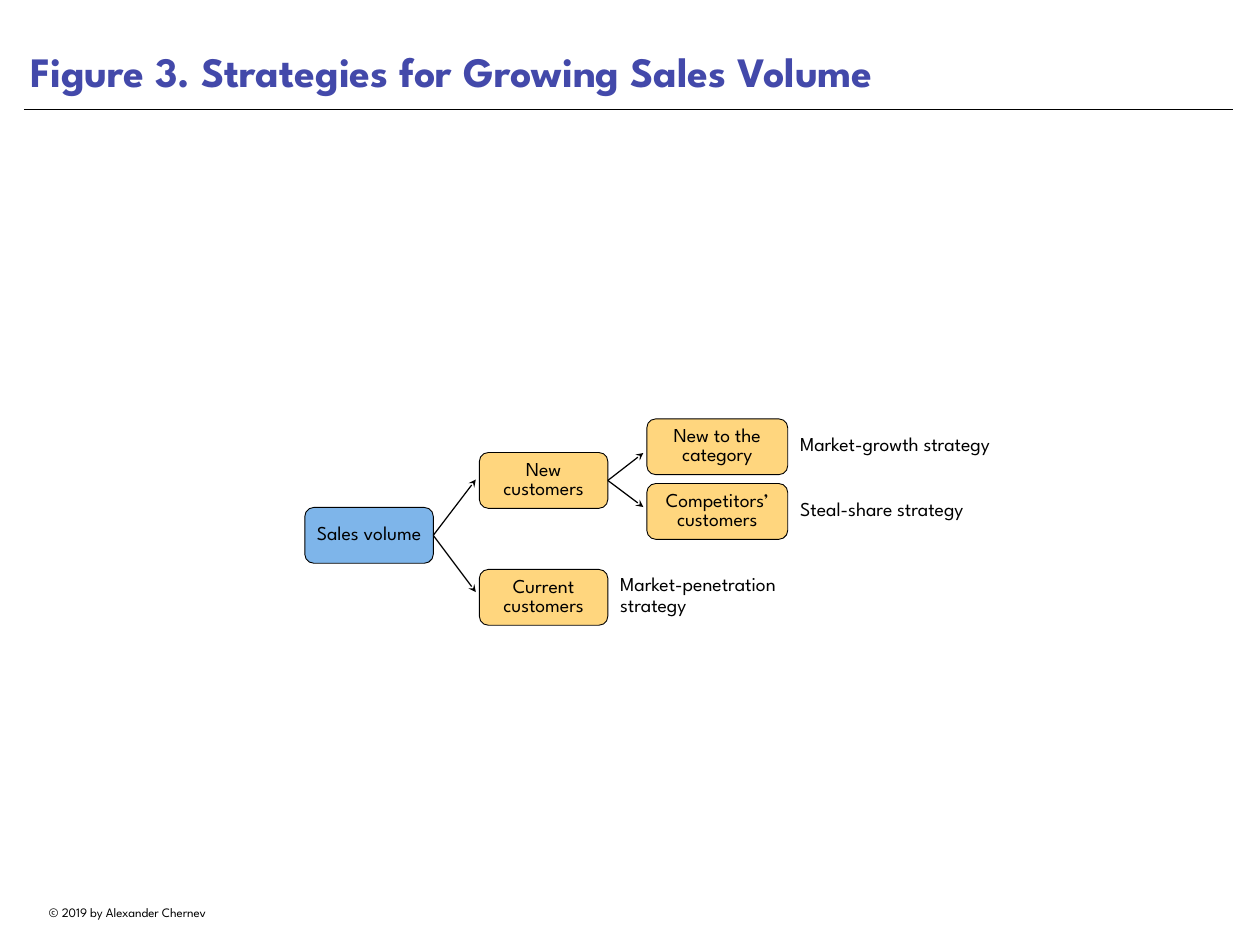
from lxml import etree
from pptx import Presentation
from pptx.dml.color import RGBColor
from pptx.enum.shapes import MSO_CONNECTOR, MSO_SHAPE
from pptx.enum.text import MSO_ANCHOR, MSO_AUTO_SIZE, PP_ALIGN
from pptx.oxml.ns import qn
from pptx.util import Inches, Pt

STRAIGHT = MSO_CONNECTOR.STRAIGHT
RECTANGLE, ROUNDED = MSO_SHAPE.RECTANGLE, MSO_SHAPE.ROUNDED_RECTANGLE
LEFT, CENTER = PP_ALIGN.LEFT, PP_ALIGN.CENTER
MIDDLE, BOTTOM = MSO_ANCHOR.MIDDLE, MSO_ANCHOR.BOTTOM
NO_FIT, FIT_SHAPE = MSO_AUTO_SIZE.NONE, MSO_AUTO_SIZE.SHAPE_TO_FIT_TEXT

FONT = "League Spartan"
BLACK, WHITE, INDIGO = "000000", "FFFFFF", "4349AA"
BLUE, YELLOW = "7EB5EA", "FFD67E"
RIGHT_SIDE = 3
BOX_HEIGHT = 0.63
LABEL_GAP, ARROW_GAP = 0.14, 0.04

# name: (text, left, top, width, fill), measured from the corner of the tree
BOXES = {
    "sales": ("Sales volume", 0, 1, 1.45, BLUE),
    "new": ("New customers", 1.97, 0.38, 1.45, YELLOW),
    "current": ("Current customers", 1.97, 1.7, 1.45, YELLOW),
    "category": ("New to the category", 3.86, 0, 1.59, YELLOW),
    "competitors": ("Competitors’ customers", 3.86, 0.73, 1.59, YELLOW),
}
# parent, child, offset of the arrow tip from the child's middle
BRANCHES = [
    ("sales", "new", -0.01),
    ("sales", "current", -0.06),
    ("new", "category", 0.07),
    ("new", "competitors", -0.05),
]
# box, strategy, label width
STRATEGIES = [
    ("current", "Market-penetration strategy", 2.34),
    ("category", "Market-growth strategy", 2.34),
    ("competitors", "Steal-share strategy", 1.95),
]


def color(hex_string):
    return RGBColor.from_string(hex_string)


def write(frame, text, size, align, anchor, inset, spacing=None, ink=BLACK, bold=False):
    frame.word_wrap = True
    frame.auto_size = NO_FIT
    frame.vertical_anchor = anchor
    frame.margin_left = frame.margin_right = Inches(inset)
    frame.margin_top = frame.margin_bottom = Inches(inset)
    paragraph = frame.paragraphs[0]
    paragraph.alignment = align
    if spacing:
        paragraph.line_spacing = spacing
    run = paragraph.add_run()
    run.text = text
    run.font.name, run.font.size, run.font.bold = FONT, Pt(size), bold
    run.font.color.rgb = color(ink)


def add_block(slide, preset, left, top, width, height, fill):
    block = slide.shapes.add_shape(
        preset, Inches(left), Inches(top), Inches(width), Inches(height))
    block.shadow.inherit = False
    block.fill.solid()
    block.fill.fore_color.rgb = color(fill)
    return block


def add_line(slide, start, end, weight):
    line = slide.shapes.add_connector(STRAIGHT, *(Inches(n) for n in (*start, *end)))
    line.line.color.rgb = color(BLACK)
    line.line.width = Pt(weight)
    etree.SubElement(line._element.spPr, qn("a:effectLst"))
    return line


def add_heading(slide, left, top, width, height):
    title = slide.shapes.title
    title.left, title.top = Inches(left), Inches(top)
    title.width, title.height = Inches(width), Inches(height)
    write(title.text_frame, "Figure 3. Strategies for Growing Sales Volume",
          34, LEFT, BOTTOM, 0.07, ink=INDIGO, bold=True)
    # Rule under the title
    rule = top + height + 0.09
    add_line(slide, (left, rule), (left + width, rule), 0.5)


def add_tree(slide, left, top):
    # Customer boxes
    boxes = {}
    for name, (text, x, y, width, fill) in BOXES.items():
        box = add_block(slide, ROUNDED, left + x, top + y, width, BOX_HEIGHT, fill)
        box.adjustments[0] = 0.16
        box.line.color.rgb = color(BLACK)
        box.line.width = Pt(0.75)
        write(box.text_frame, text, 16, CENTER, MIDDLE, 0.04, spacing=0.8)
        boxes[name] = box

    # Arrows from parent to child
    for parent, child, tip_offset in BRANCHES:
        _, x, y, width, _ = BOXES[parent]
        _, child_x, child_y, _, _ = BOXES[child]
        start = (left + x + width, top + y + BOX_HEIGHT / 2)
        tip = (left + child_x - ARROW_GAP, top + child_y + BOX_HEIGHT / 2 + tip_offset)
        arrow = add_line(slide, start, tip, 1)
        arrow.begin_connect(boxes[parent], RIGHT_SIDE)
        etree.SubElement(arrow.line._get_or_add_ln(), qn("a:tailEnd"), type="stealth")

    # Strategy labels
    for name, strategy, label_width in STRATEGIES:
        _, x, y, width, _ = BOXES[name]
        label = add_block(slide, RECTANGLE, left + x + width + LABEL_GAP, top + y - 0.02,
                          label_width, 0.64, WHITE)
        label.line.fill.background()
        write(label.text_frame, strategy, 16, LEFT, MIDDLE, 0, spacing=0.9)


def add_copyright(slide, left, top, width, height):
    notice = slide.shapes.add_textbox(
        Inches(left), Inches(top), Inches(width), Inches(height))
    write(notice.text_frame, "© 2019 by Alexander Chernev", 10.5, CENTER, MIDDLE, 0.05)
    notice.text_frame.word_wrap = False
    notice.text_frame.auto_size = FIT_SHAPE


def main():
    deck = Presentation()
    deck.slide_width, deck.slide_height = Inches(14.22), Inches(10.67)
    slide = deck.slides.add_slide(deck.slide_layouts[5])
    add_heading(slide, 0.27, 0, 13.64, 1.15)
    add_tree(slide, 3.44, 4.73)
    add_copyright(slide, 0.27, 10.16, 2.34, 0.28)
    deck.save("out.pptx")


if __name__ == "__main__":
    main()
